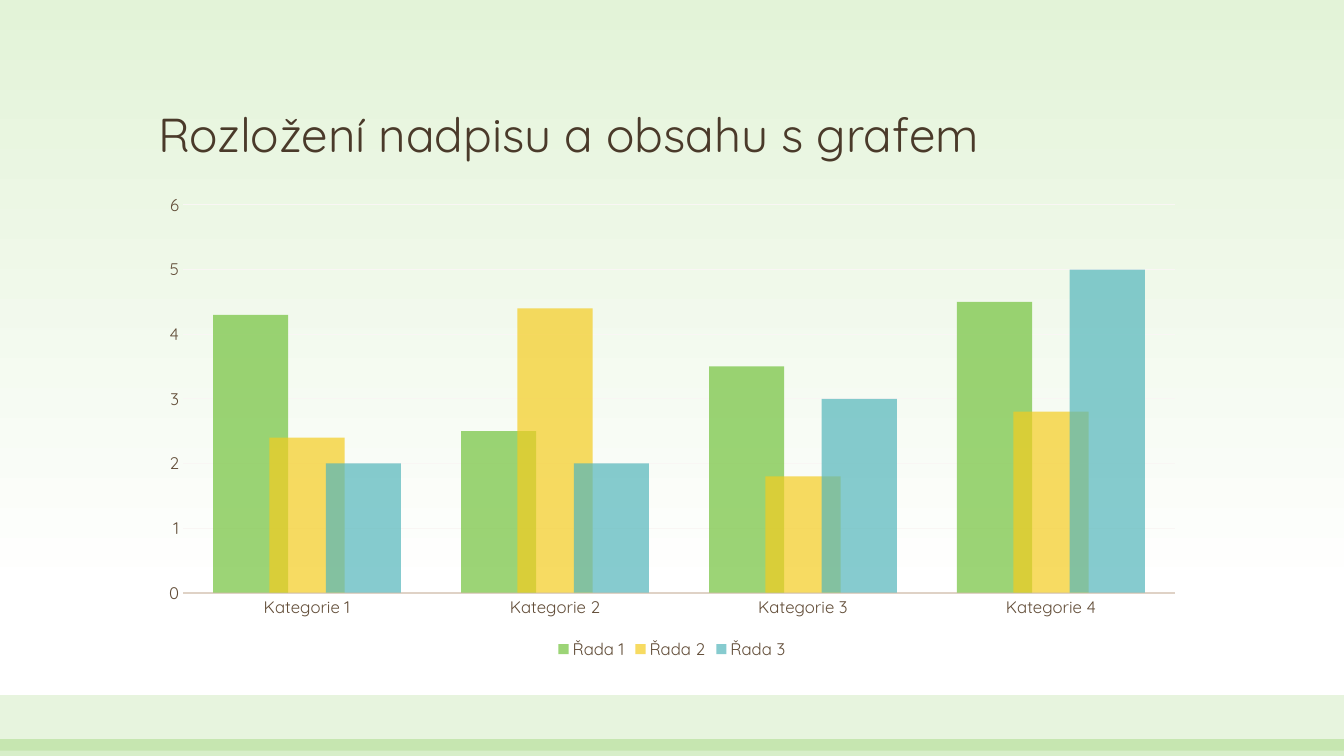
import pptx
import pptx.chart.data
import pptx.dml.color
import pptx.enum.chart
import pptx.enum.shapes
import pptx.enum.text
import pptx.oxml
import pptx.oxml.ns
import pptx.util

RGBColor = pptx.dml.color.RGBColor
SKY = RGBColor(0xE3, 0xF3, 0xD8)
WHITE = RGBColor(0xFF, 0xFF, 0xFF)
GREEN = RGBColor(0x72, 0xC2, 0x3C)
YELLOW = RGBColor(0xF4, 0xCC, 0x20)
TEAL = RGBColor(0x53, 0xB6, 0xBB)
DARK_BROWN = RGBColor(0x4A, 0x3A, 0x2A)
BROWN = RGBColor(0x62, 0x4D, 0x38)
AXIS_LINE = RGBColor(0xDF, 0xD2, 0xC6)
GRID_LINE = RGBColor(0xF9, 0xF6, 0xF4)

EMU_PER_PX = 9525
WIDTH, HEIGHT = 1280, 720


def px(*lengths):
    return [pptx.util.Emu(length * EMU_PER_PX) for length in lengths]


class SlideBuilder:
    font_name = "Quicksand"

    def __init__(self, slide):
        self.slide = slide

    def style_font(self, font, size, color):
        font.name = self.font_name
        font.size = pptx.util.Pt(size)
        font.color.rgb = color

    def fill(self, part_fill, color, opacity):
        part_fill.solid()
        part_fill.fore_color.rgb = color
        for rgb in part_fill._xPr.iter(pptx.oxml.ns.qn("a:srgbClr")):
            alpha = pptx.oxml.parse_xml(
                f'<a:alpha {pptx.oxml.ns.nsdecls("a")} val="{opacity * 1000}"/>')
            rgb.append(alpha)

    def background(self, top, bottom, end):
        sky = self.slide.background.fill
        sky.gradient()
        sky.gradient_angle = 270
        for stop, color, position in zip(sky.gradient_stops, (top, bottom), (0, end)):
            stop.color.rgb = color
            stop.position = position

    def band(self, top, height, color, opacity):
        band = self.slide.shapes.add_shape(
            pptx.enum.shapes.MSO_SHAPE.RECTANGLE, *px(0, top, WIDTH, height))
        band.shadow.inherit = False
        band.line.fill.background()
        self.fill(band.fill, color, opacity)

    def title(self, wording, box):
        heading = self.slide.shapes.title
        heading.left, heading.top, heading.width, heading.height = px(*box)
        frame = heading.text_frame
        frame.word_wrap = True
        frame.auto_size = pptx.enum.text.MSO_AUTO_SIZE.NONE
        frame.vertical_anchor = pptx.enum.text.MSO_ANCHOR.BOTTOM
        paragraph = frame.paragraphs[0]
        paragraph.alignment = pptx.enum.text.PP_ALIGN.LEFT
        paragraph.line_spacing = 0.9
        run = paragraph.add_run()
        run.text = wording
        self.style_font(run.font, 34, DARK_BROWN)

    def column_chart(self, categories, rows, box):
        figures = pptx.chart.data.CategoryChartData()
        figures.categories = categories
        for name, values, _ in rows:
            figures.add_series(name, values)
        chart = self.slide.shapes.add_chart(
            pptx.enum.chart.XL_CHART_TYPE.COLUMN_CLUSTERED, *px(*box), figures).chart
        chart.has_title = False
        self.style_font(chart.font, 10, BROWN)

        columns = chart.plots[0]
        columns.gap_width = 80
        columns.overlap = 25
        columns.vary_by_categories = False
        for series, (_, _, color) in zip(columns.series, rows):
            series.invert_if_negative = False
            self.fill(series.format.fill, color, 70)

        for axis in (chart.category_axis, chart.value_axis):
            axis.major_tick_mark = pptx.enum.chart.XL_TICK_MARK.NONE
            axis.minor_tick_mark = pptx.enum.chart.XL_TICK_MARK.NONE
            self.style_font(axis.tick_labels.font, 12, BROWN)
        self.line(chart.category_axis.format.line, AXIS_LINE, 1.25)

        scale = chart.value_axis
        scale.minimum_scale, scale.maximum_scale, scale.major_unit = 0, 6, 1
        scale.format.line.fill.background()
        scale.has_major_gridlines = True
        self.line(scale.major_gridlines.format.line, GRID_LINE, 0.75)

        chart.has_legend = True
        chart.legend.position = pptx.enum.chart.XL_LEGEND_POSITION.BOTTOM
        chart.legend.include_in_layout = False
        self.style_font(chart.legend.font, 12, BROWN)

    def line(self, stroke, color, width):
        stroke.color.rgb = color
        stroke.width = pptx.util.Pt(width)


def main():
    deck = pptx.Presentation()
    deck.slide_width, deck.slide_height = px(WIDTH, HEIGHT)
    builder = SlideBuilder(deck.slides.add_slide(deck.slide_layouts[5]))
    builder.background(SKY, WHITE, 0.79)
    builder.band(662, 53, GREEN, 17)
    builder.band(704, 16, GREEN, 28)
    builder.title("Rozložení nadpisu a obsahu s grafem", (141, 46, 998, 114))
    builder.column_chart(
        [f"Kategorie {number}" for number in range(1, 5)],
        [
            ("Řada 1", (4.3, 2.5, 3.5, 4.5), GREEN),
            ("Řada 2", (2.4, 4.4, 1.8, 2.8), YELLOW),
            ("Řada 3", (2, 2, 3, 5), TEAL),
        ],
        (141, 176, 998, 456),
    )
    deck.save("out.pptx")


if __name__ == "__main__":
    main()
